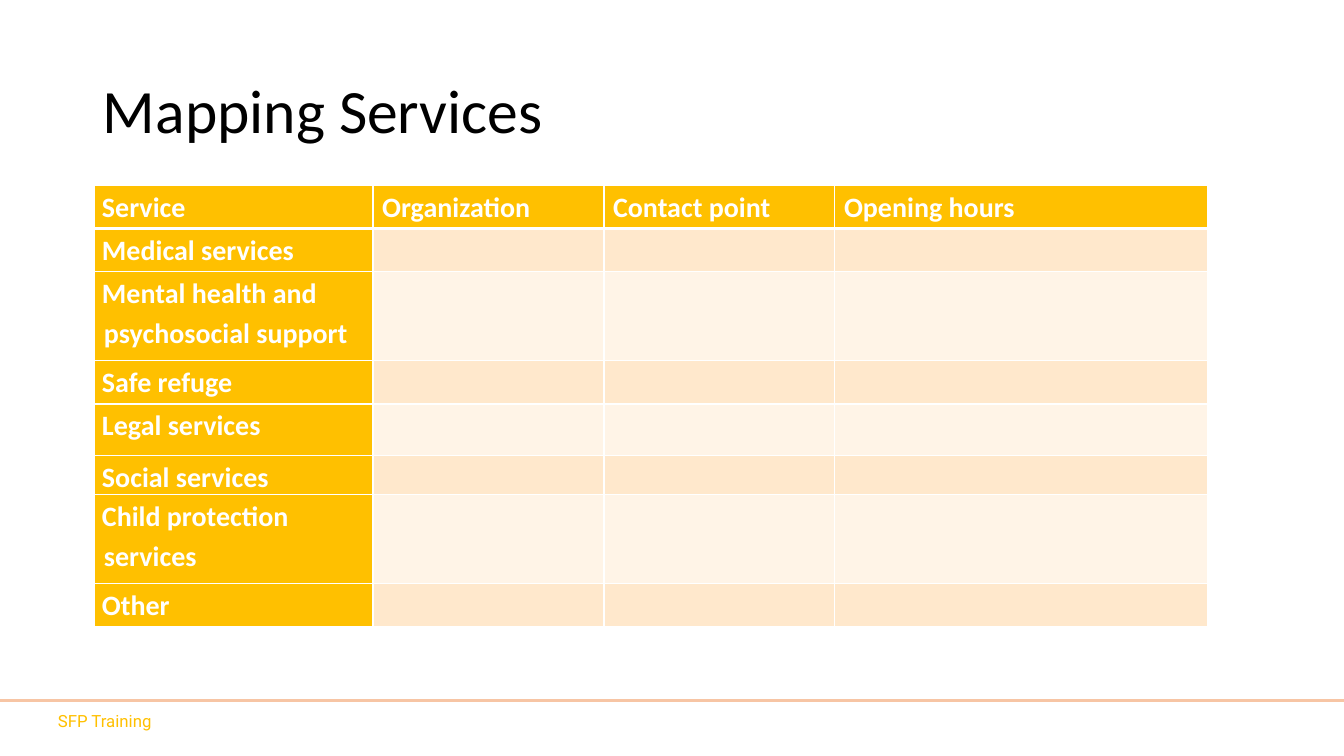
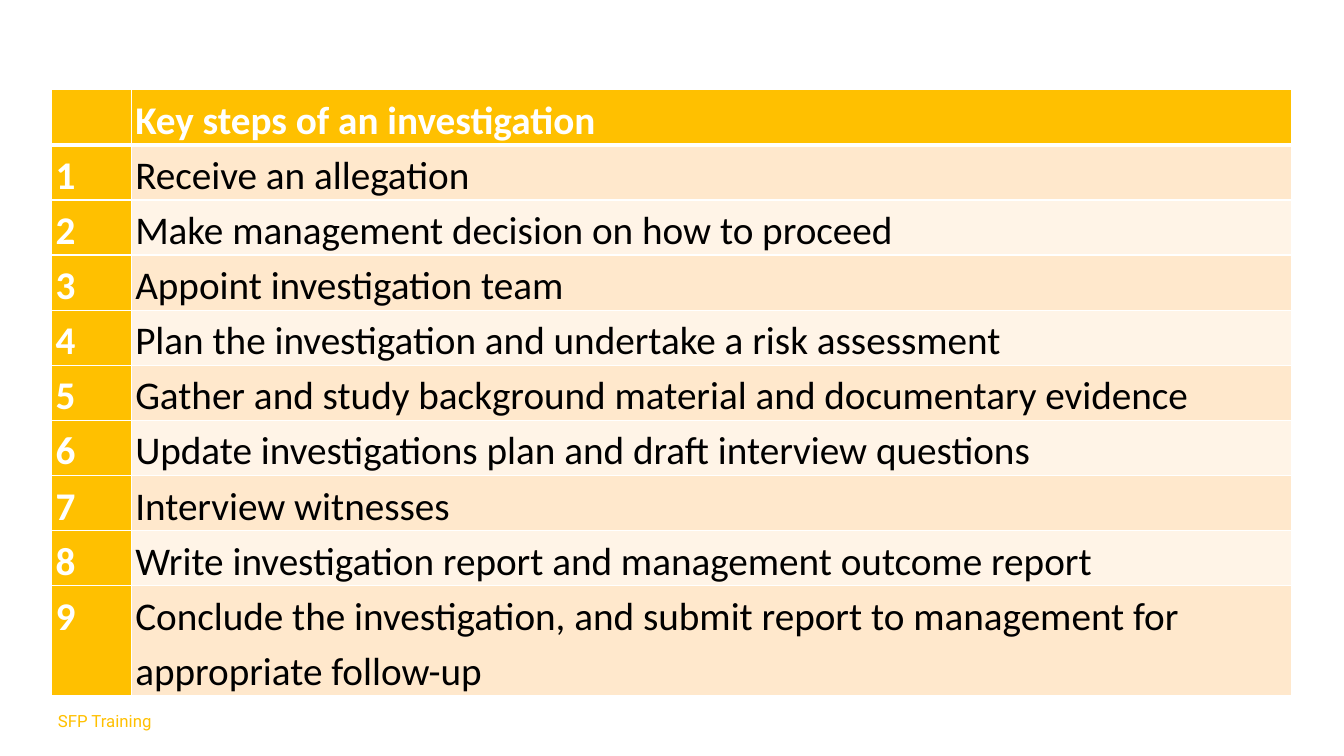
from dataclasses import dataclass
from lxml.etree import SubElement
from pptx import Presentation
from pptx.dml.color import RGBColor
from pptx.enum.shapes import MSO_CONNECTOR
from pptx.enum.text import MSO_ANCHOR, PP_ALIGN
from pptx.oxml.ns import qn
from pptx.util import Cm, Pt


@dataclass(frozen=True)
class Theme:
    accent: str = "FFC000"
    rule: str = "ED7D31"
    rule_alpha: int = 43
    bands: tuple = ("FFE8CC", "FFF4E7")
    white: str = "FFFFFF"
    black: str = "000000"
    font: str = "Calibri"
    footer_font: str = "Roboto"
    title_size: int = 44
    services_size: int = 20
    steps_size: int = 28
    footer_size: int = 12
    line_spacing: float = 1.15


T = Theme()
WIDTH, HEIGHT = 33.87, 19.05
FOOTER_TOP = 17.65

SERVICES = [
    ["Service", "Organization", "Contact point", "Opening hours"],
    ["Medical services"],
    ["Mental health and psychosocial support"],
    ["Safe refuge"],
    ["Legal services"],
    ["Social services"],
    ["Child protection services"],
    ["Other"],
]
STEPS = [
    "Receive an allegation",
    "Make management decision on how to proceed",
    "Appoint investigation team",
    "Plan the investigation and undertake a risk assessment",
    "Gather and study background material and documentary evidence",
    "Update investigations plan and draft interview questions",
    "Interview witnesses",
    "Write investigation report and management outcome report",
    "Conclude the investigation, and submit report to management for "
    "appropriate follow-up",
]


# Text
def write(tf, text, size, color=T.black, font=T.font, bold=False,
          align=PP_ALIGN.LEFT, spacing=1.0):
    p = tf.paragraphs[0]
    p.alignment, p.line_spacing = align, spacing
    r = p.add_run()
    r.text = text
    r.font.name, r.font.size, r.font.bold = font, Pt(size), bold
    r.font.color.rgb = RGBColor.from_string(color)
    return p


def add_title(s, text):
    title = s.shapes.title
    title.left, title.top = Cm(2.34), Cm(1.02)
    title.width, title.height = Cm(29.21), Cm(3.68)
    title.text_frame.vertical_anchor = MSO_ANCHOR.MIDDLE
    write(title.text_frame, text, T.title_size, spacing=0.9)


# Footer
def add_footer(s):
    box = s.shapes.add_textbox(Cm(0), Cm(FOOTER_TOP), Cm(5.28), Cm(1.02))
    tf = box.text_frame
    tf.word_wrap = True
    tf.vertical_anchor = MSO_ANCHOR.MIDDLE
    write(tf, "SFP Training", T.footer_size, T.accent, T.footer_font,
          align=PP_ALIGN.CENTER)


def add_footer_rule(s):
    line = s.shapes.add_connector(MSO_CONNECTOR.STRAIGHT, Cm(0),
                                  Cm(FOOTER_TOP), Cm(WIDTH), Cm(FOOTER_TOP))
    line.line.color.rgb = RGBColor.from_string(T.rule)
    line.line.width = Pt(2)
    sp_pr = line._element.spPr
    color = next(sp_pr.iter(qn("a:srgbClr")))
    SubElement(color, qn("a:alpha"), val=str(T.rule_alpha * 1000))
    SubElement(sp_pr, qn("a:effectLst"))


# Tables
def set_borders(cell, top=1, bottom=1):
    tc_pr = cell._tc.get_or_add_tcPr()
    for side, width in (("L", 1), ("R", 1), ("T", top), ("B", bottom)):
        ln = SubElement(tc_pr, qn(f"a:ln{side}"), w=str(Pt(width)))
        fill = SubElement(ln, qn("a:solidFill"))
        SubElement(fill, qn("a:srgbClr"), val=T.white)


def add_grid(s, left, top, cols, heights, rows, size, inset, indent=0):
    """Header row and first column are accented; the rest is banded."""
    tbl = s.shapes.add_table(len(rows), len(cols), Cm(left), Cm(top),
                             Cm(sum(cols)), Cm(sum(heights))).table
    for col, width in zip(tbl.columns, cols):
        col.width = Cm(width)
    for i, (row, height) in enumerate(zip(rows, heights)):
        tbl.rows[i].height = Cm(height)
        for j in range(len(cols)):
            cell = tbl.cell(i, j)
            cell.margin_left = cell.margin_right = Cm(inset)
            cell.margin_top = cell.margin_bottom = 0
            # The heavy rule lies between the header and the first row
            set_borders(cell, top=3 if i == 1 else 1, bottom=1 if i else 3)
            accented = i == 0 or j == 0
            cell.fill.solid()
            cell.fill.fore_color.rgb = RGBColor.from_string(
                T.accent if accented else T.bands[(i - 1) % 2])
            if j < len(row) and row[j]:
                p = write(cell.text_frame, row[j], size,
                          T.white if accented else T.black,
                          bold=accented, spacing=T.line_spacing)
                p_pr = p._p.get_or_add_pPr()
                p_pr.set("marL", str(Cm(indent)))
                p_pr.set("indent", str(0 if j else -Cm(indent)))


# Slides
def build_services(prs):
    s = prs.slides.add_slide(prs.slide_layouts[5])
    add_title(s, "Mapping Services")
    add_footer(s)
    add_footer_rule(s)
    add_grid(s, 2.39, 4.67, [7.01, 5.82, 5.82, 9.4],
             [1.09, 1.09, 2.24, 1.09, 1.3, 0.99, 2.24, 1.09],
             SERVICES, T.services_size, inset=0.18, indent=0.05)


def build_steps(prs):
    s = prs.slides.add_slide(prs.slide_layouts[6])
    add_footer(s)
    rows = [["", "Key steps of an investigation"]]
    rows += [[str(n), step] for n, step in enumerate(STEPS, 1)]
    line = 1.39
    add_grid(s, 1.3, 2.26, [2.01, 29.24], [line] * len(STEPS) + [2 * line],
             rows, T.steps_size, inset=0.1)


def main():
    prs = Presentation()
    prs.slide_width, prs.slide_height = Cm(WIDTH), Cm(HEIGHT)
    build_services(prs)
    build_steps(prs)
    prs.save("out.pptx")


if __name__ == "__main__":
    main()
